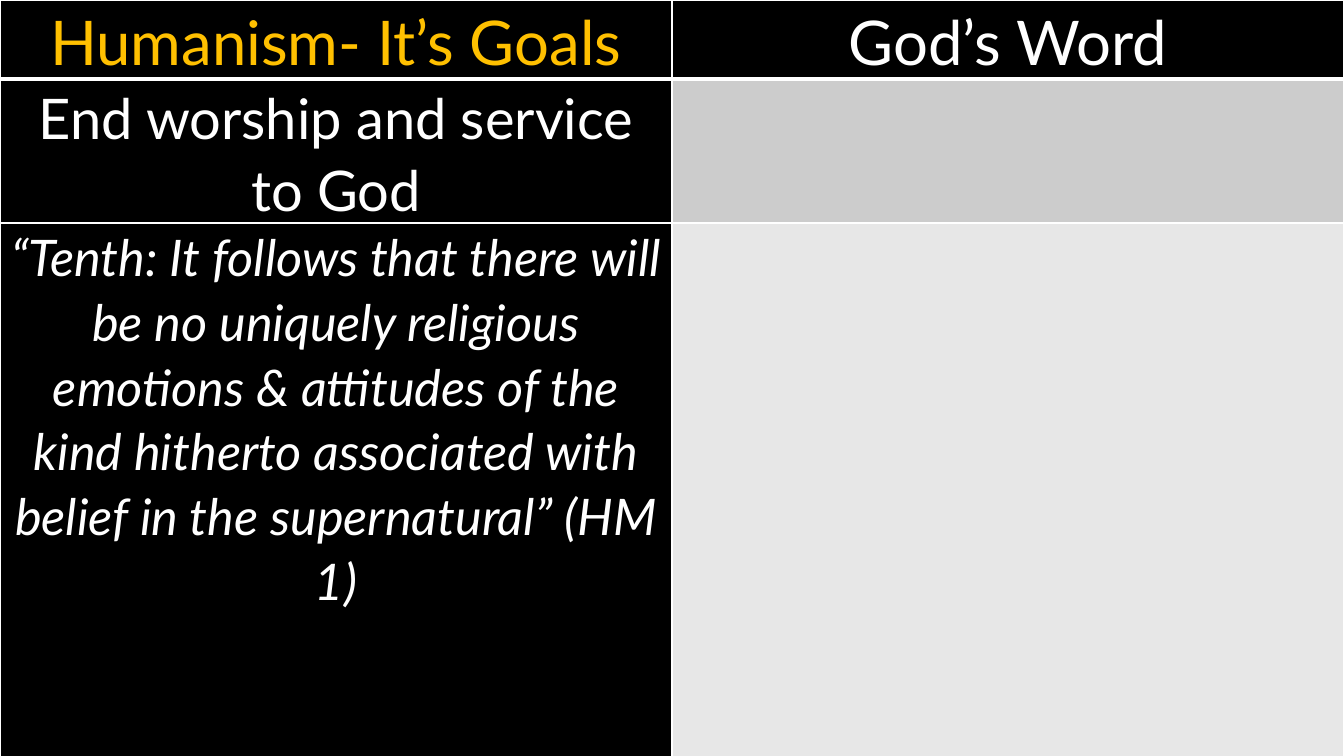
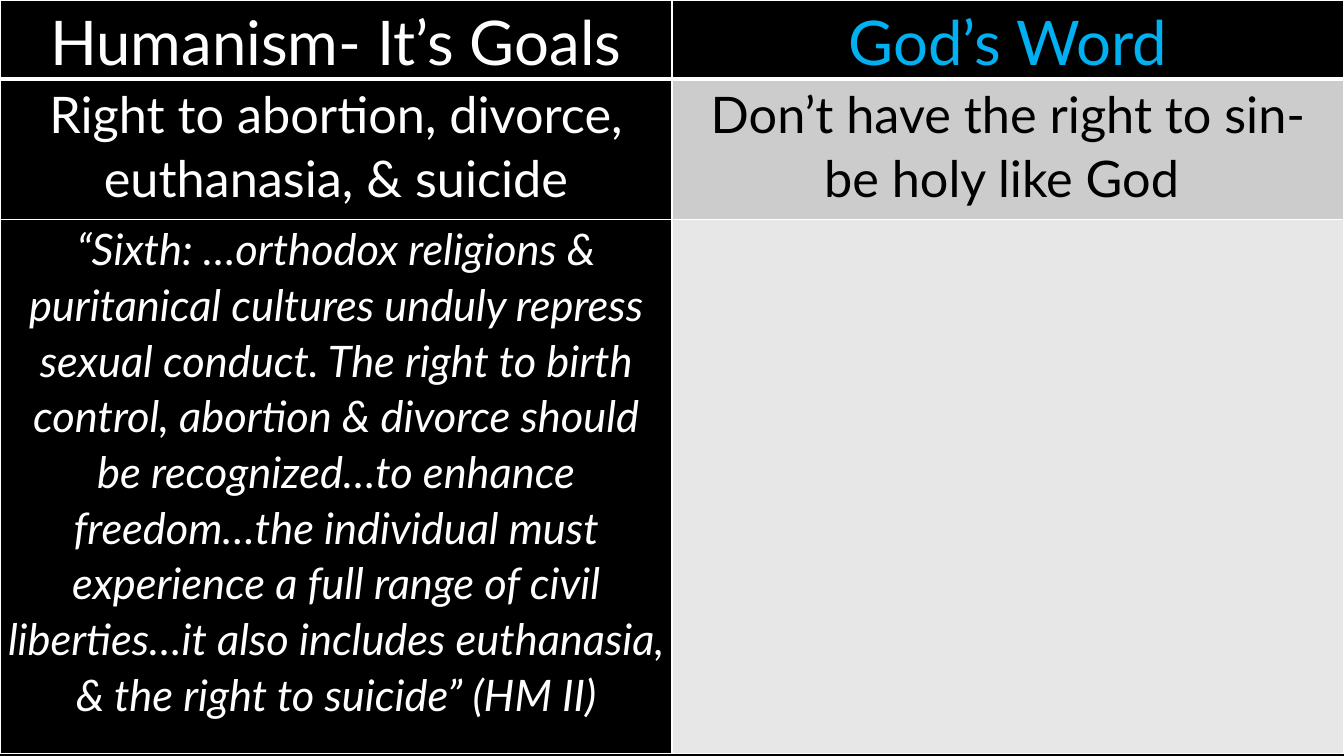
import pptx
import pptx.dml.color
import pptx.enum.text
import pptx.oxml
import pptx.oxml.ns
import pptx.util
from lxml import etree

Inches = pptx.util.Inches
RGBColor = pptx.dml.color.RGBColor

BLACK = RGBColor(0x00, 0x00, 0x00)
WHITE = RGBColor(0xFF, 0xFF, 0xFF)
GOLD = RGBColor(0xFF, 0xC0, 0x00)
BLUE = RGBColor(0x00, 0xB0, 0xF0)
MEDIUM_GRAY = RGBColor(0xCC, 0xCC, 0xCC)
LIGHT_GRAY = RGBColor(0xE7, 0xE7, 0xE7)

FONT = "Lato"
SLIDE_WIDTH = 13.33
SLIDE_HEIGHT = 7.5
HEADER_HEIGHT = 0.78
GOAL_HEIGHT = 1.39
HEADER_SIZE = 44
THIN_LINE = 1
HEADER_LINE = 3

ROW_FILLS = [(BLACK, BLACK), (BLACK, MEDIUM_GRAY), (BLACK, LIGHT_GRAY)]


def write_text(cell, text, size=36, color=WHITE, italic=False):
    paragraph = cell.text_frame.paragraphs[0]
    paragraph.alignment = pptx.enum.text.PP_ALIGN.CENTER
    paragraph.line_spacing = 1.07
    run = paragraph.add_run()
    run.text = text
    run.font.name = FONT
    run.font.size = pptx.util.Pt(size)
    run.font.bold = False
    run.font.italic = italic
    run.font.color.rgb = color


class ComparisonDeck:
    def __init__(self):
        self.presentation = pptx.Presentation()
        self.presentation.slide_width = Inches(SLIDE_WIDTH)
        self.presentation.slide_height = Inches(SLIDE_HEIGHT)
        self.slide = None

    def add_slide(self):
        self.slide = self.presentation.slides.add_slide(self.presentation.slide_layouts[6])
        background = self.slide.background.fill
        background.solid()
        background.fore_color.rgb = BLACK

    def add_border(self, cell, side, width):
        properties = cell._tc.get_or_add_tcPr()
        line = etree.SubElement(properties, pptx.oxml.ns.qn(f"a:ln{side}"), w=str(pptx.util.Pt(width)))
        fill = etree.SubElement(line, pptx.oxml.ns.qn("a:solidFill"))
        etree.SubElement(fill, pptx.oxml.ns.qn("a:srgbClr"), val=str(WHITE))

    def style_cell(self, cell, row, fill_color):
        cell.margin_left = cell.margin_right = Inches(0.07)
        cell.margin_top = cell.margin_bottom = 0
        widths = {
            "L": THIN_LINE,
            "R": THIN_LINE,
            "T": HEADER_LINE if row == 1 else THIN_LINE,
            "B": HEADER_LINE if row == 0 else THIN_LINE,
        }
        for side, width in widths.items():
            self.add_border(cell, side, width)
        cell.fill.solid()
        cell.fill.fore_color.rgb = fill_color

    def add_comparison(self, quote_height, contents):
        heights = [HEADER_HEIGHT, GOAL_HEIGHT, quote_height]
        table = self.slide.shapes.add_table(
            len(heights), 2, 0, 0, Inches(SLIDE_WIDTH), Inches(sum(heights))
        ).table
        table.first_row = False
        table.horz_banding = False
        for row, (height, fills) in enumerate(zip(heights, ROW_FILLS)):
            table.rows[row].height = Inches(height)
            for column, fill_color in enumerate(fills):
                cell = table.cell(row, column)
                self.style_cell(cell, row, fill_color)
                if (row, column) in contents:
                    write_text(cell, **contents[row, column])

    def add_goal_slide(self, goal, quote, answer=None, goals_color=WHITE, word_color=WHITE, quote_height=5.33):
        contents = {
            (0, 0): dict(text="Humanism- It’s Goals", size=HEADER_SIZE, color=goals_color),
            (0, 1): dict(text="God’s Word", size=HEADER_SIZE, color=word_color),
            (1, 0): goal,
            (2, 0): dict(quote, italic=True),
        }
        if answer:
            contents[1, 1] = answer
        self.add_slide()
        self.add_comparison(quote_height, contents)


def main():
    deck = ComparisonDeck()
    deck.add_goal_slide(
        goal=dict(text="End worship and service to God", size=40),
        quote=dict(
            text="“Tenth: It follows that there will be no uniquely religious emotions & attitudes "
            "of the kind hitherto associated with belief in the supernatural” (HM 1)"
        ),
        goals_color=GOLD,
    )
    deck.add_goal_slide(
        goal=dict(text="Right to abortion, divorce, euthanasia, & suicide"),
        answer=dict(text="Don’t have the right to sin- be holy like God ", color=BLACK),
        quote=dict(
            text="“Sixth: …orthodox religions & puritanical cultures unduly repress sexual conduct. "
            "The right to birth control, abortion & divorce should be recognized…to enhance "
            "freedom…the individual must experience a full range of civil liberties…it also "
            "includes euthanasia, & the right to suicide” (HM II)",
            size=31,
        ),
        word_color=BLUE,
        quote_height=5.3,
    )
    deck.presentation.save("out.pptx")


if __name__ == "__main__":
    main()
